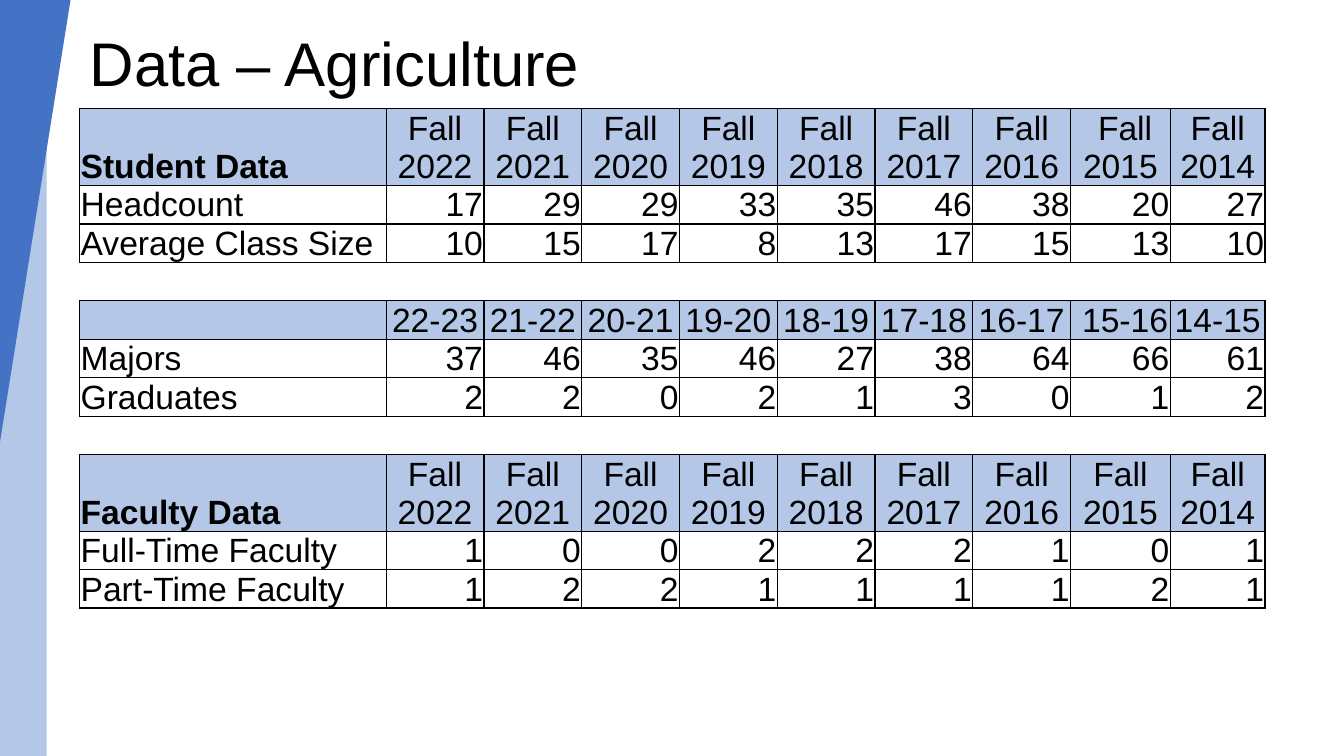
import pptx
import pptx.util
import pptx.dml.color
import pptx.enum.shapes
import pptx.enum.text
import pptx.oxml

PALE_BLUE = pptx.dml.color.RGBColor(0xB4, 0xC7, 0xE7)
BLUE = pptx.dml.color.RGBColor(0x44, 0x72, 0xC4)
BLACK = pptx.dml.color.RGBColor(0, 0, 0)
WHITE = pptx.dml.color.RGBColor(0xFF, 0xFF, 0xFF)
FONT = "Arial"
ALIGN = pptx.enum.text.PP_ALIGN
ANCHOR = pptx.enum.text.MSO_ANCHOR
SHAPE = pptx.enum.shapes.MSO_SHAPE
DRAWING_NAMESPACE = "http://schemas.openxmlformats.org/drawingml/2006/main"
LINE_HEIGHT = 0.38
COLUMN_WIDTHS = [3.04] + [0.97] * 7 + [0.99, 0.94]
FALL_TERMS = [f"Fall {year}" for year in range(2022, 2013, -1)]
STUDENT_TERMS = [" " + term if term.endswith("2015") else term for term in FALL_TERMS]
ACADEMIC_YEARS = "22-23,21-22,20-21,19-20,18-19,17-18,16-17, 15-16,14-15".split(",")

SECTIONS = [
    ("Student Data", STUDENT_TERMS, {
        "Headcount": [17, 29, 29, 33, 35, 46, 38, 20, 27],
        "Average Class Size": [10, 15, 17, 8, 13, 17, 15, 13, 10],
    }),
    ("", ACADEMIC_YEARS, {
        "Majors": [37, 46, 35, 46, 27, 38, 64, 66, 61],
        "Graduates": [2, 2, 0, 2, 1, 3, 0, 1, 2],
    }),
    ("Faculty Data", FALL_TERMS, {
        "Full-Time Faculty": [1, 0, 0, 2, 2, 2, 1, 0, 1],
        "Part-Time Faculty": [1, 2, 2, 1, 1, 1, 1, 2, 1],
    }),
]


def apply_format(target, values):
    for name, value in values.items():
        setattr(target, name, value)


def place(shape, box):
    lengths = [pptx.util.Inches(length) for length in box]
    apply_format(shape, dict(zip(("left", "top", "width", "height"), lengths)))


def format_font(font, size, bold=False):
    apply_format(font, {"name": FONT, "size": pptx.util.Pt(size), "bold": bold})
    font.color.rgb = BLACK


def add_title(slide, box, text):
    title = slide.shapes.title
    place(title, box)
    frame = title.text_frame
    frame.text = text
    apply_format(frame, {"vertical_anchor": ANCHOR.MIDDLE, "word_wrap": True,
                         "auto_size": pptx.enum.text.MSO_AUTO_SIZE.NONE})
    paragraph = frame.paragraphs[0]
    apply_format(paragraph, {"alignment": ALIGN.LEFT, "line_spacing": 0.9})
    format_font(paragraph.runs[0].font, 44)


def add_side_band(slide, box):
    left, top, width, height = box
    group = slide.shapes.add_group_shape()
    parts = [
        (SHAPE.RECTANGLE, 0.66, 1, PALE_BLUE),
        (SHAPE.ISOSCELES_TRIANGLE, 1, 0.585, BLUE),
    ]
    for kind, width_share, height_share, color in parts:
        shape = group.shapes.add_shape(kind, 0, 0, 0, 0)
        place(shape, (left, top, width * width_share, height * height_share))
        shape.shadow.inherit = False
        shape.fill.solid()
        shape.fill.fore_color.rgb = color
        shape.line.fill.background()
    shape.adjustments[0] = 0
    shape._element.spPr.xfrm.set("flipV", "1")


def set_borders(cell, visible_sides):
    properties = cell._tc.get_or_add_tcPr()
    for side in "LRTB":
        paint = "<a:noFill/>"
        if side in visible_sides:
            paint = f'<a:solidFill><a:srgbClr val="{BLACK}"/></a:solidFill>'
        properties.append(pptx.oxml.parse_xml(
            f'<a:ln{side} xmlns:a="{DRAWING_NAMESPACE}" w="12700">{paint}</a:ln{side}>'))


def fill_cell(cell, text, color, alignment, bold):
    apply_format(cell, {
        "vertical_anchor": ANCHOR.BOTTOM,
        "margin_left": pptx.util.Inches(0.01),
        "margin_right": pptx.util.Inches(0.01),
        "margin_top": pptx.util.Inches(0.01),
        "margin_bottom": 0,
    })
    set_borders(cell, "LRTB" if color else "TB")
    if color:
        cell.fill.solid()
        cell.fill.fore_color.rgb = color
    else:
        cell.fill.background()
    paragraph = cell.text_frame.paragraphs[0]
    paragraph.alignment = alignment
    if text:
        run = paragraph.add_run()
        run.text = text
        format_font(run.font, 24, bold)


def list_rows(sections):
    rows = []
    for label, headings, measures in sections:
        if rows:
            rows.append(([""] * len(COLUMN_WIDTHS), None, ALIGN.LEFT, False))
        rows.append(([label] + headings, PALE_BLUE, ALIGN.CENTER, True))
        for measure, values in measures.items():
            rows.append(([measure] + [str(value) for value in values],
                         WHITE, ALIGN.RIGHT, False))
    return rows


def add_data_table(slide, left, top, sections):
    rows = list_rows(sections)
    line_counts = [2 if row[0][-1].startswith("Fall") else 1 for row in rows]
    box = (left, top, sum(COLUMN_WIDTHS), sum(line_counts) * LINE_HEIGHT)
    frame = slide.shapes.add_table(
        len(rows), len(COLUMN_WIDTHS), *[pptx.util.Inches(length) for length in box])
    table = frame.table
    apply_format(table, {"first_row": False, "horz_banding": False})
    for column, width in zip(table.columns, COLUMN_WIDTHS):
        column.width = pptx.util.Inches(width)
    for table_row, line_count, row in zip(table.rows, line_counts, rows):
        table_row.height = pptx.util.Inches(line_count * LINE_HEIGHT)
        texts, color, alignment, bold_label = row
        for index, (cell, text) in enumerate(zip(table_row.cells, texts)):
            is_label = index == 0
            fill_cell(cell, text, color, ALIGN.LEFT if is_label else alignment,
                      bold_label and is_label)


def add_data_slide(presentation, title, sections):
    slide = presentation.slides.add_slide(presentation.slide_layouts[5])
    add_title(slide, (0.79, 0.24, 7.04, 0.84), title)
    add_side_band(slide, (0, 0, 0.7, 7.5))
    add_data_table(slide, 0.79, 1.08, sections)


def main():
    presentation = pptx.Presentation()
    apply_format(presentation, {"slide_width": pptx.util.Inches(13.33),
                                "slide_height": pptx.util.Inches(7.5)})
    add_data_slide(presentation, "Data – Agriculture", SECTIONS)
    presentation.save("out.pptx")


if __name__ == "__main__":
    main()
